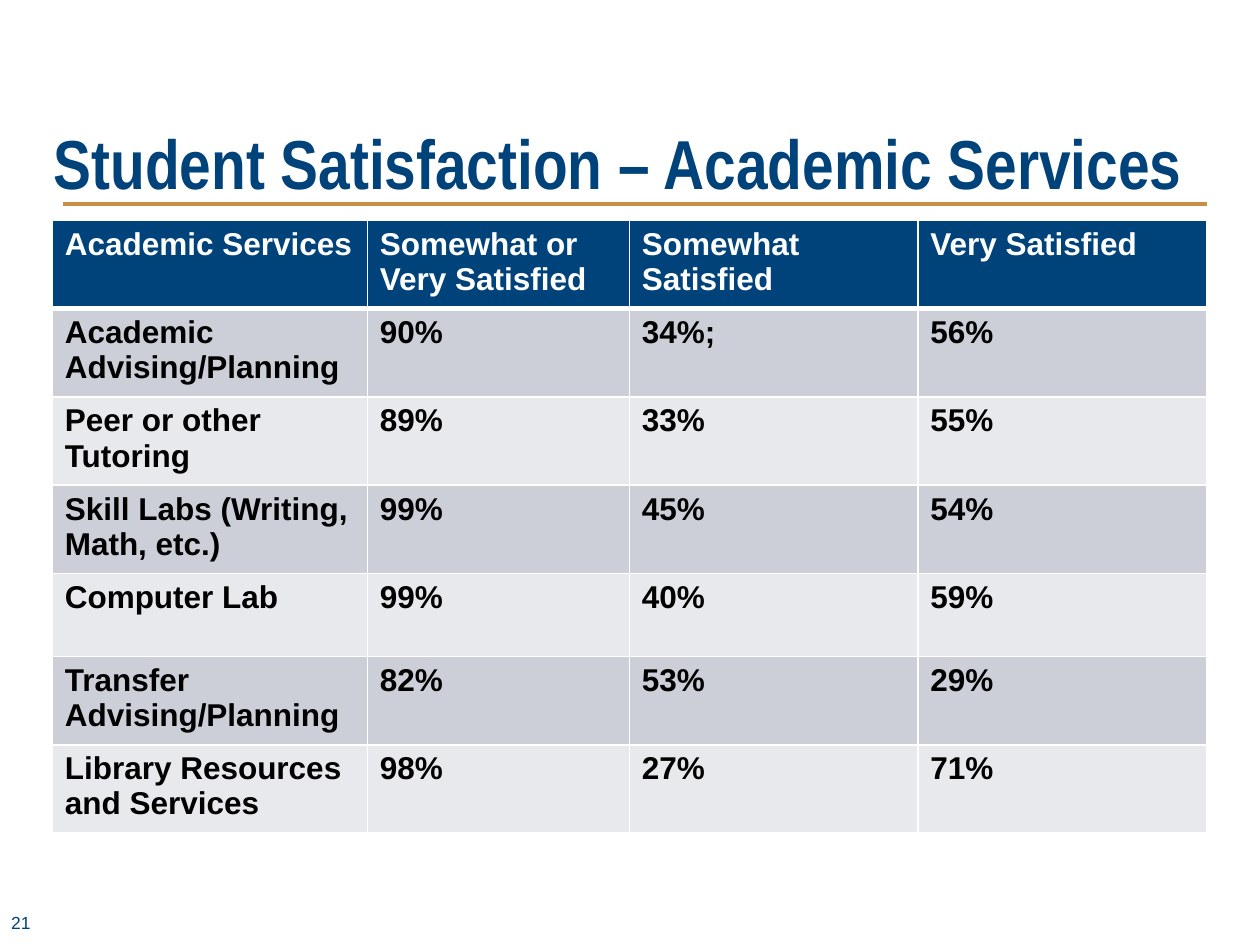
import pptx
import pptx.dml.color
import pptx.enum.shapes
import pptx.enum.text
import pptx.oxml
import pptx.oxml.ns
import pptx.util
from lxml import etree

COLORS = {
    "navy": "00427A",
    "gold": "C78E44",
    "white": "FFFFFF",
    "black": "000000",
    "band_dark": "CCCFD7",
    "band_light": "E7E9EC",
}

HEADER = ["Academic Services", "Somewhat or Very Satisfied",
          "Somewhat Satisfied", "Very Satisfied"]
SERVICES = [
    ["Academic Advising/Planning", "90%", "34%;", "56%"],
    ["Peer or other Tutoring", "89%", "33%", "55%"],
    ["Skill Labs (Writing, Math, etc.)", "99%", "45%", "54%"],
    ["Computer Lab", "99%", "40%", "59%"],
    ["Transfer Advising/Planning", "82%", "53%", "29%"],
    ["Library Resources and Services", "98%", "27%", "71%"],
]


class SlideBuilder:
    """Places elements by percentages of the slide's width and height."""

    def __init__(self, deck):
        self.width, self.height = deck.slide_width, deck.slide_height
        self.slide = deck.slides.add_slide(deck.slide_layouts[6])

    def x(self, percent):
        return round(self.width * percent / 100)

    def y(self, percent):
        return round(self.height * percent / 100)

    def color(self, name):
        return pptx.dml.color.RGBColor.from_string(COLORS[name])

    def style(self, paragraph, size, color, bold=False, face="Arial"):
        font = paragraph.font
        font.name, font.size, font.bold = face, pptx.util.Pt(size), bold
        font.color.rgb = self.color(color)

    def text(self, words, left, top, width, height, anchor, line_points=None, **style):
        box = self.slide.shapes.add_textbox(
            self.x(left), self.y(top), self.x(width), self.y(height))
        frame = box.text_frame
        frame.word_wrap = True
        frame.vertical_anchor = anchor
        paragraph = frame.paragraphs[0]
        paragraph.text = words
        if line_points:
            paragraph.line_spacing = pptx.util.Pt(line_points)
        self.style(paragraph, **style)

    def rule(self, left, right, top, color, weight):
        line = self.slide.shapes.add_connector(
            pptx.enum.shapes.MSO_CONNECTOR.STRAIGHT,
            self.x(left), self.y(top), self.x(right), self.y(top))
        line.line.color.rgb = self.color(color)
        line.line.width = pptx.util.Pt(weight)
        etree.SubElement(line._element.spPr, pptx.oxml.ns.qn("a:effectLst"))

    def cell_borders(self, cell, **weights):
        properties = cell._tc.get_or_add_tcPr()
        for position, side in enumerate(("L", "R", "T", "B")):
            weight = pptx.util.Pt(weights.get(side, 1))
            border = pptx.oxml.parse_xml(
                f'<a:ln{side} {pptx.oxml.ns.nsdecls("a")} w="{weight}"><a:solidFill>'
                f'<a:srgbClr val="{COLORS["white"]}"/></a:solidFill></a:ln{side}>')
            properties.insert(position, border)

    def table(self, rows, left, top, column_widths, row_height):
        table = self.slide.shapes.add_table(
            len(rows), len(column_widths), self.x(left), self.y(top),
            self.x(sum(column_widths)), self.y(row_height * len(rows))).table
        for column, width in zip(table.columns, column_widths):
            column.width = self.x(width)
        for r, values in enumerate(rows):
            table.rows[r].height = self.y(row_height)
            band = "navy" if r == 0 else "band_dark" if r % 2 else "band_light"
            heavy_edge = {0: {"B": 3}, 1: {"T": 3}}.get(r, {})
            for c, value in enumerate(values):
                cell = table.cell(r, c)
                cell.text = value
                cell.fill.solid()
                cell.fill.fore_color.rgb = self.color(band)
                self.cell_borders(cell, **heavy_edge)
                self.style(cell.text_frame.paragraphs[0], 18,
                           "black" if r else "white", bold=True)


def main():
    deck = pptx.Presentation()
    deck.slide_width, deck.slide_height = pptx.util.Inches(10), pptx.util.Inches(7.5)
    anchors = pptx.enum.text.MSO_ANCHOR

    builder = SlideBuilder(deck)
    builder.rule(5, 95.8, 21.6, "gold", 2.25)
    builder.text("Student Satisfaction – Academic Services", 3.3, 7.07, 93.3, 15.07,
                 anchors.BOTTOM, line_points=44, size=39.6, color="navy",
                 bold=True, face="Arial Narrow")
    builder.table([HEADER] + SERVICES, 4.15, 23.33, [25, 20.8, 22.9, 22.9], 8.8)
    builder.text("21", -0.1, 95.33, 6.7, 4.67, anchors.MIDDLE, size=10, color="navy")
    deck.save("out.pptx")


if __name__ == "__main__":
    main()
